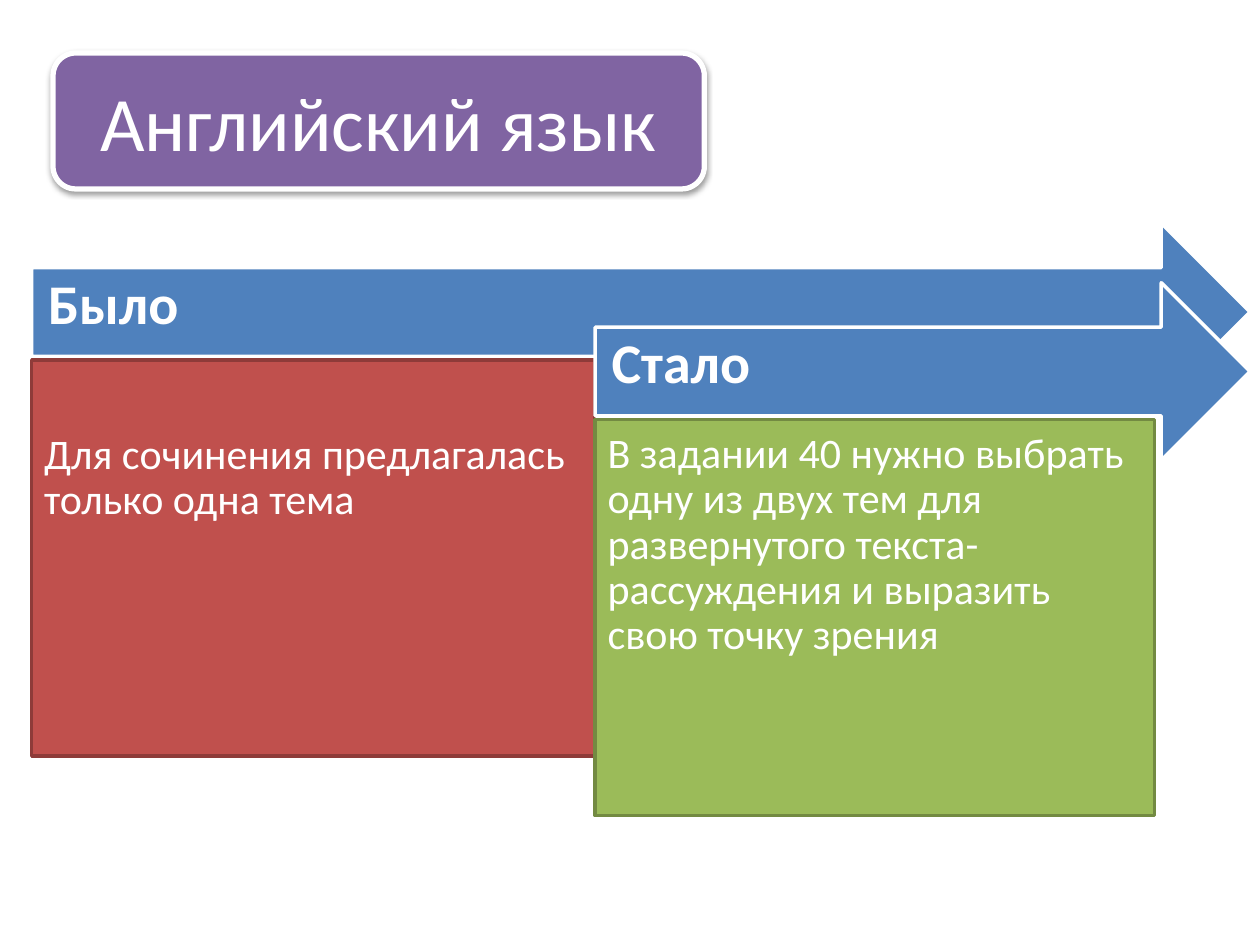
from lxml import etree
from pptx import Presentation
from pptx.dml.color import RGBColor
from pptx.enum.shapes import MSO_SHAPE
from pptx.enum.text import MSO_ANCHOR, PP_ALIGN
from pptx.oxml.ns import qn
from pptx.util import Cm, Pt

ARROW = MSO_SHAPE.RIGHT_ARROW
RECTANGLE = MSO_SHAPE.RECTANGLE
ROUNDED = MSO_SHAPE.ROUNDED_RECTANGLE
TOP, MIDDLE = MSO_ANCHOR.TOP, MSO_ANCHOR.MIDDLE
LEFT, CENTER = PP_ALIGN.LEFT, PP_ALIGN.CENTER

WHITE = RGBColor(0xFF, 0xFF, 0xFF)
BLUE = RGBColor(0x4F, 0x81, 0xBD)
RED = RGBColor(0xC0, 0x50, 0x4D)
DARK_RED = RGBColor(0x8E, 0x3B, 0x39)
GREEN = RGBColor(0x9B, 0xBB, 0x59)
DARK_GREEN = RGBColor(0x73, 0x8A, 0x42)
PURPLE = RGBColor(0x80, 0x64, 0xA2)

ARROW_TOP = 4.5
ARROW_HEIGHT = 3.58
PANEL_DROP = 2.76
PANEL_HEIGHT = 7.98
STEP_DOWN = 1.2
ARROW_TIP = 25.2


class SlideBuilder:
    font_name = "Calibri"

    def __init__(self, page):
        self.page = page

    def shape(self, kind, place, fill, outline, outline_width=2):
        box = self.page.shapes.add_shape(kind, *(Cm(length) for length in place))
        box.shadow.inherit = False
        box.fill.solid()
        box.fill.fore_color.rgb = fill
        box.line.color.rgb = outline
        box.line.width = Pt(outline_width)
        return box

    def label(self, box, text, size, insets, anchor, align=LEFT, bold=False, spacing=0.9):
        """Fill the box with one paragraph; insets are left, top, right, bottom in cm."""
        frame = box.text_frame
        frame.word_wrap = True
        frame.vertical_anchor = anchor
        (frame.margin_left, frame.margin_top,
         frame.margin_right, frame.margin_bottom) = (Cm(inset) for inset in insets)
        para = frame.paragraphs[0]
        para.alignment = align
        para.line_spacing = spacing
        span = para.add_run()
        span.text = text
        span.font.name = self.font_name
        span.font.size = Pt(size)
        span.font.bold = bold
        span.font.color.rgb = WHITE

    def arrow(self, left, top, text):
        place = (left, top, ARROW_TIP - left, ARROW_HEIGHT)
        box = self.shape(ARROW, place, BLUE, WHITE)
        self.label(box, text, 32, (0.33, 0.33, 0.71, 0.56), MIDDLE, bold=True)

    def panel(self, left, top, width, fill, outline, text, top_inset):
        box = self.shape(RECTANGLE, (left, top, width, PANEL_HEIGHT), fill, outline)
        self.label(box, text, 24, (0.25, top_inset, 0.25, 0.25), TOP)

    def title(self, text):
        box = self.shape(ROUNDED, (1.07, 1.07, 13.13, 2.74), PURPLE, WHITE, 3)
        self.label(box, text, 44, (0.25, 0.13, 0.25, 0.13), MIDDLE, CENTER, spacing=1.0)
        self.drop_shadow(box)

    def drop_shadow(self, box):
        effects = box._element.spPr.find(qn("a:effectLst"))
        shadow = etree.SubElement(effects, qn("a:outerShdw"), blurRad="40000",
                                  dist="20000", dir="5400000", rotWithShape="0")
        color = etree.SubElement(shadow, qn("a:srgbClr"), val="000000")
        etree.SubElement(color, qn("a:alpha"), val="38000")


def main():
    deck = Presentation()
    deck.slide_width, deck.slide_height = Cm(25.4), Cm(19.05)
    builder = SlideBuilder(deck.slides.add_slide(deck.slide_layouts[6]))

    stages = [
        ("Было", 0.64, 11.35, RED, DARK_RED,
         "Для сочинения предлагалась только одна тема", 1.47),
        ("Стало", 12, 11.28, GREEN, DARK_GREEN,
         "В задании 40 нужно выбрать одну из двух тем для развернутого "
         "текста-рассуждения и выразить свою точку зрения", 0.25),
    ]
    for index, (heading, left, width, fill, outline, text, top_inset) in enumerate(stages):
        top = ARROW_TOP + index * STEP_DOWN
        builder.arrow(left, top, heading)
        builder.panel(left, top + PANEL_DROP, width, fill, outline, text, top_inset)
    builder.title("Английский язык")

    deck.save("out.pptx")


if __name__ == "__main__":
    main()
